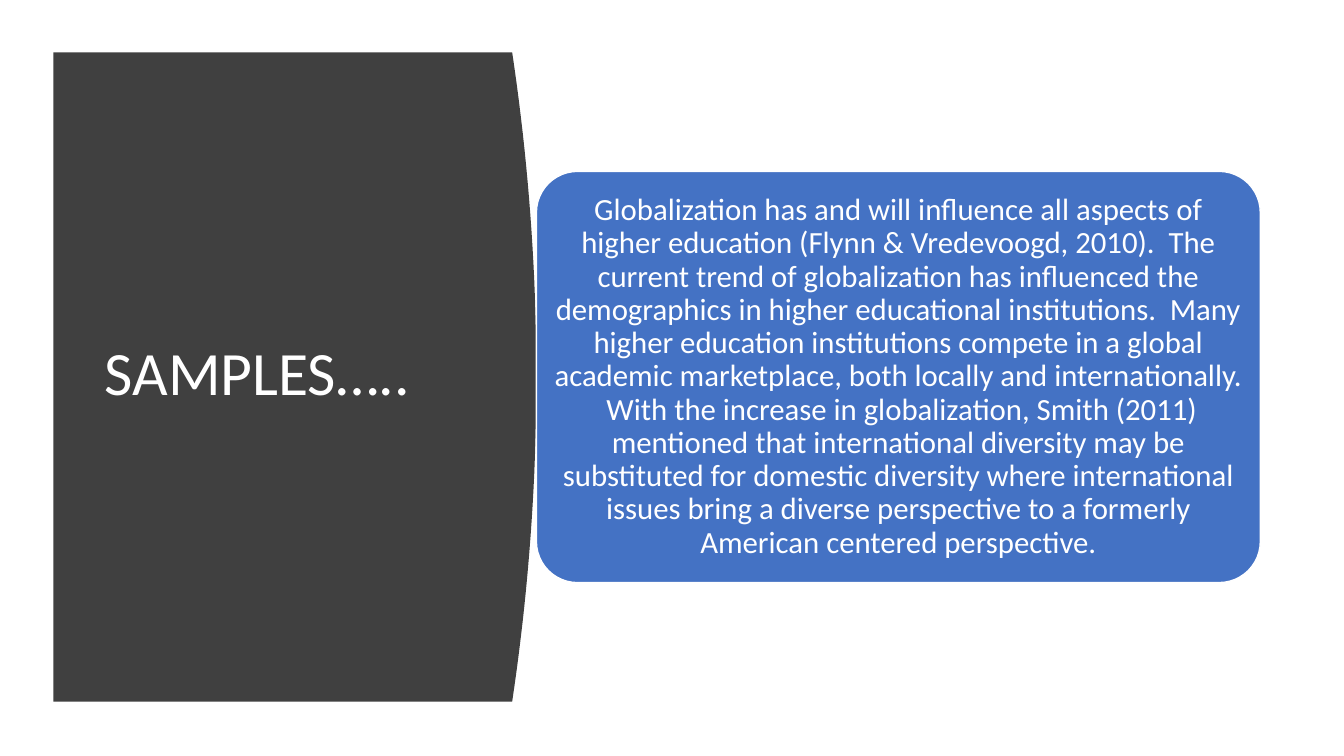
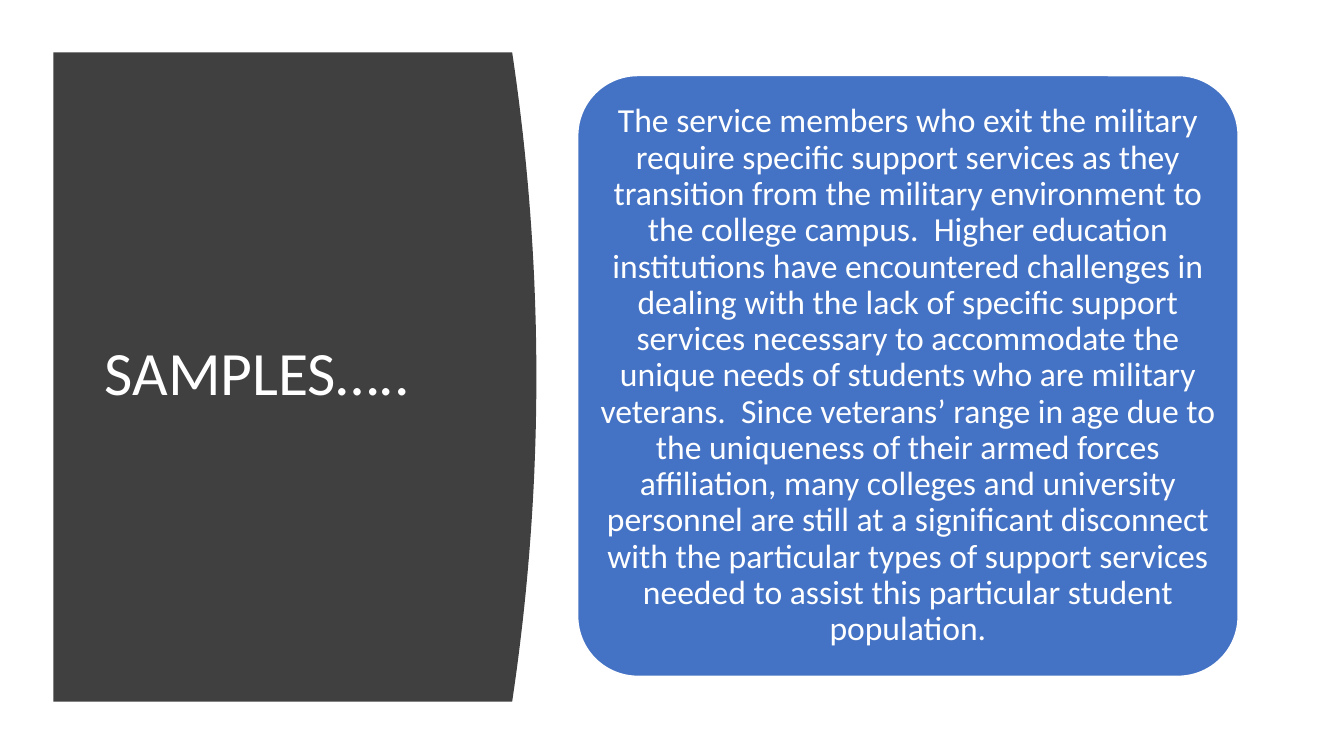
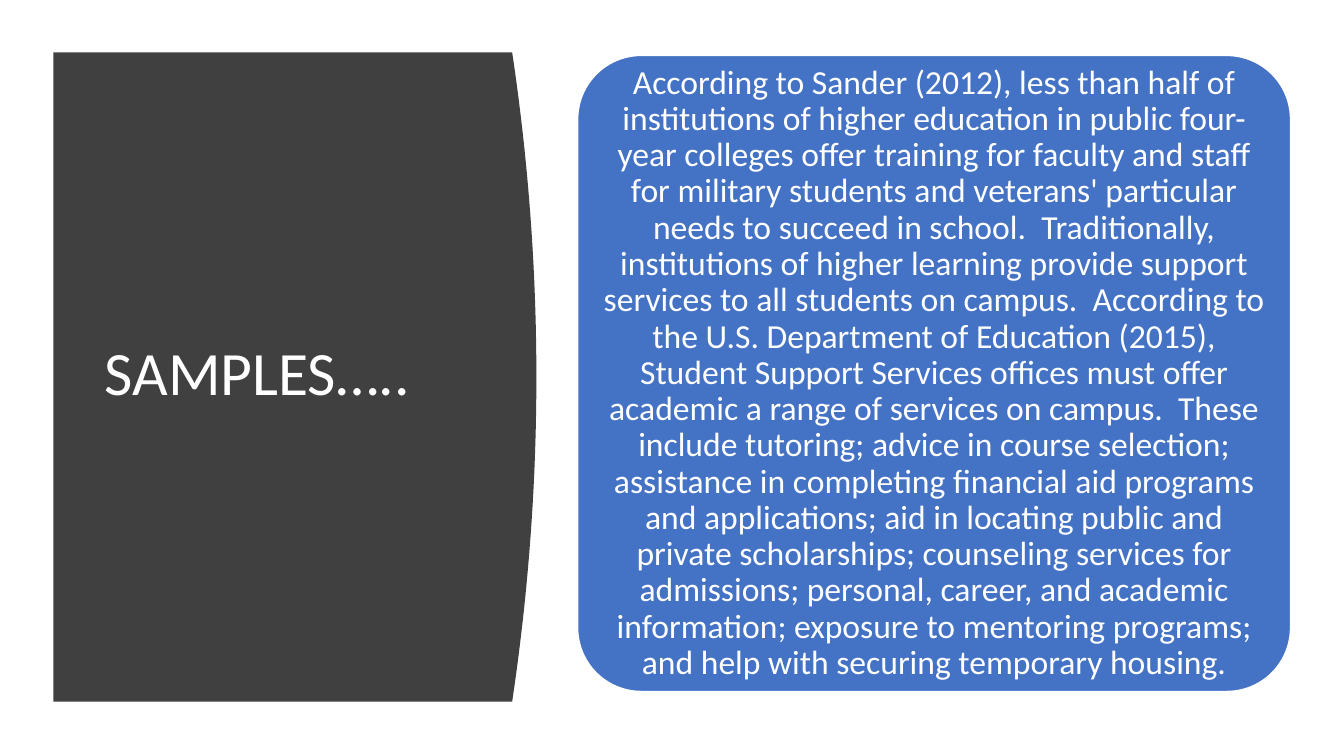
from pptx import Presentation
from pptx.dml.color import RGBColor
from pptx.enum.shapes import MSO_SHAPE
from pptx.enum.text import MSO_ANCHOR, PP_ALIGN
from pptx.util import Pt

PIXEL = 9144
WIDTH, HEIGHT = 1333, 750
ROUNDED = MSO_SHAPE.ROUNDED_RECTANGLE
MIDDLE = MSO_ANCHOR.MIDDLE
LEFT, CENTER = PP_ALIGN.LEFT, PP_ALIGN.CENTER
FONT = "Calibri"
COLORS = {"panel": "404040", "card": "4472C4", "white": "FFFFFF"}

TITLE = "SAMPLES….."
SAMPLES = [
    ((532, 170, 718, 408), 22,
     "Globalization has and will influence all aspects of higher education "
     "(Flynn & Vredevoogd, 2010).  The current trend of globalization has "
     "influenced the demographics in higher educational institutions.  Many "
     "higher education institutions compete in a global academic marketplace, "
     "both locally and internationally.  With the increase in globalization, "
     "Smith (2011) mentioned that international diversity may be substituted "
     "for domestic diversity where international issues bring a diverse "
     "perspective to a formerly American centered perspective."),
    ((573, 75, 655, 596), 24,
     "The service members who exit the military require specific support "
     "services as they transition from the military environment to the college "
     "campus.  Higher education institutions have encountered challenges in "
     "dealing with the lack of specific support services necessary to "
     "accommodate the unique needs of students who are military veterans.  "
     "Since veterans’ range in age due to the uniqueness of their armed forces "
     "affiliation, many colleges and university personnel are still at a "
     "significant disconnect with the particular types of support services "
     "needed to assist this particular student population."),
    ((573, 55, 707, 631), 24,
     "According to Sander (2012), less than half of institutions of higher "
     "education in public four-year colleges offer training for faculty and "
     "staff for military students and veterans' particular needs to succeed in "
     "school.  Traditionally, institutions of higher learning provide support "
     "services to all students on campus.  According to the U.S. Department of "
     "Education (2015), Student Support Services offices must offer academic a "
     "range of services on campus.  These include tutoring; advice in course "
     "selection; assistance in completing financial aid programs and "
     "applications; aid in locating public and private scholarships; counseling "
     "services for admissions; personal, career, and academic information; "
     "exposure to mentoring programs; and help with securing temporary housing."),
]


def px(*lengths):
    return [round(length * PIXEL) for length in lengths]


def color(name):
    return RGBColor.from_string(COLORS[name])


class Deck:
    def __init__(self):
        self.presentation = Presentation()
        self.presentation.slide_width, self.presentation.slide_height = px(WIDTH, HEIGHT)
        self.slide = None

    def add_slide(self):
        self.slide = self.presentation.slides.add_slide(self.presentation.slide_layouts[6])

    def paint(self, shape, name):
        shape.shadow.inherit = False
        shape.fill.solid()
        shape.fill.fore_color.rgb = color(name)

    def set_text(self, shape, text, size, alignment, inset_x, inset_y):
        frame = shape.text_frame
        frame.word_wrap = True
        frame.vertical_anchor = MIDDLE
        frame.margin_left = frame.margin_right = inset_x * PIXEL
        frame.margin_top = frame.margin_bottom = inset_y * PIXEL
        paragraph = frame.paragraphs[0]
        paragraph.text = text
        paragraph.alignment = alignment
        paragraph.line_spacing = 0.9
        paragraph.font.name = FONT
        paragraph.font.size = Pt(size)
        paragraph.font.color.rgb = color("white")

    def panel(self, left, top, edge, bottom, bulge, steps=40):
        curve = []
        for step in range(steps + 1):
            offset = 2 * step / steps - 1
            x = edge + bulge * (1 - offset ** 2)
            y = top + (bottom - top) * step / steps
            curve.append(px(x, y))
        builder = self.slide.shapes.build_freeform(*px(left, top))
        builder.add_line_segments(curve + [px(left, bottom)], close=True)
        shape = builder.convert_to_shape()
        self.paint(shape, "panel")
        shape.line.fill.background()

    def title(self, text):
        box = self.slide.shapes.add_textbox(*px(94, 111, 374, 524))
        self.set_text(box, text, 44, LEFT, 10, 5)

    def card(self, bounds, size, text):
        shape = self.slide.shapes.add_shape(ROUNDED, *px(*bounds))
        shape.adjustments[0] = 0.1
        self.paint(shape, "card")
        shape.line.color.rgb = color("white")
        shape.line.width = Pt(1)
        self.set_text(shape, text, size, CENTER, 5, 3)


def main():
    deck = Deck()
    for bounds, size, text in SAMPLES:
        deck.add_slide()
        deck.panel(53, 52, 508, 696, 24)
        deck.title(TITLE)
        deck.card(bounds, size, text)
    deck.presentation.save("out.pptx")


if __name__ == "__main__":
    main()
